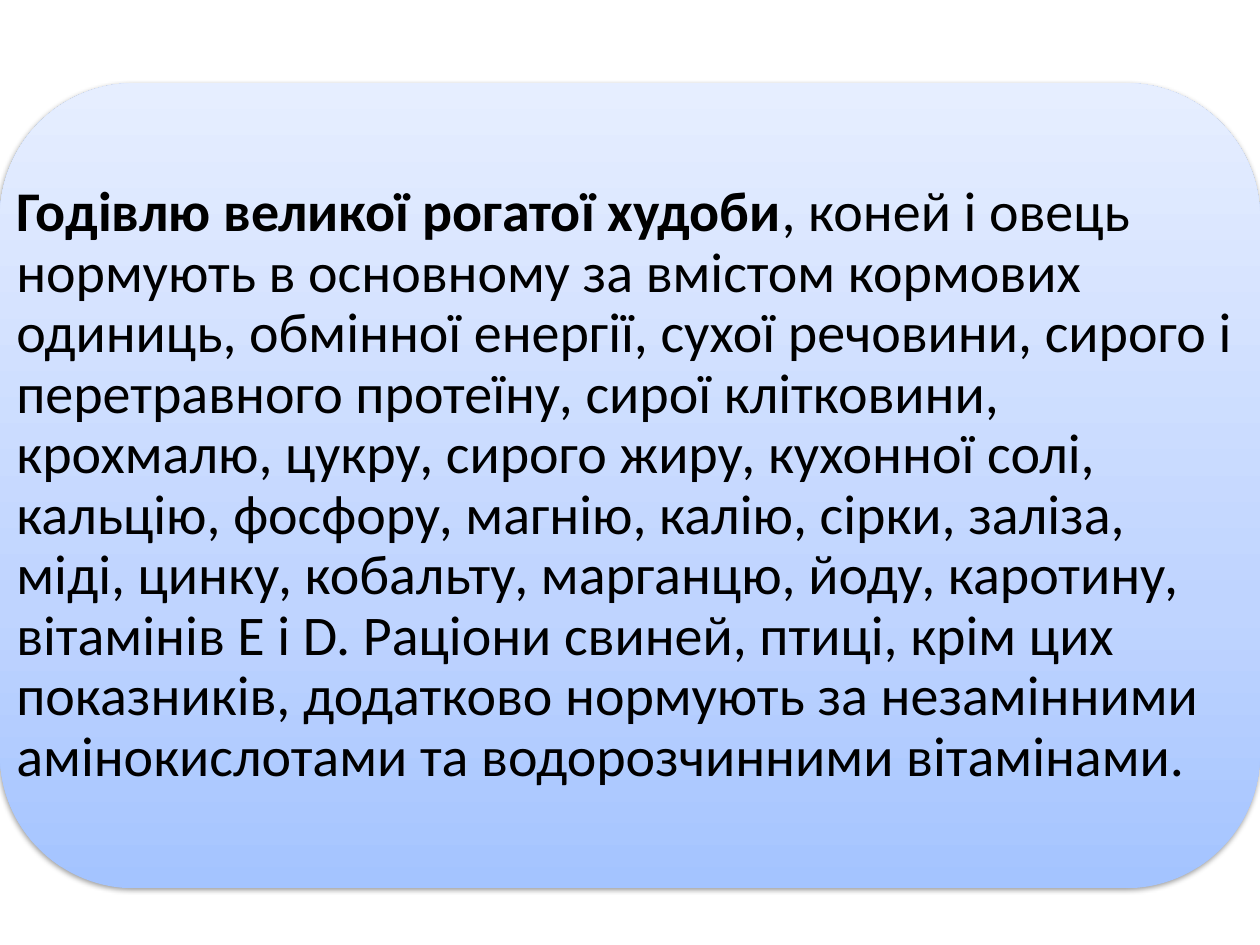
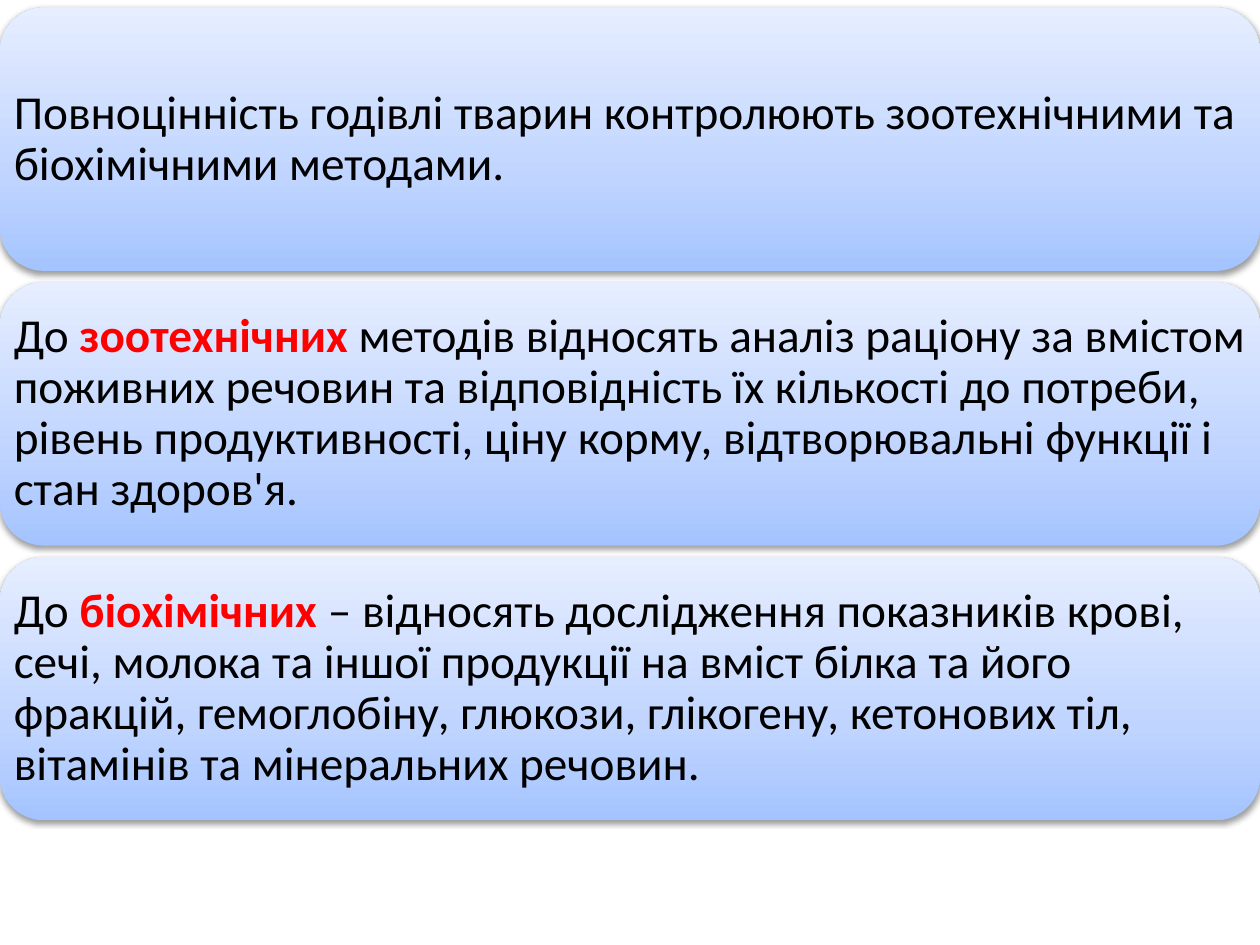
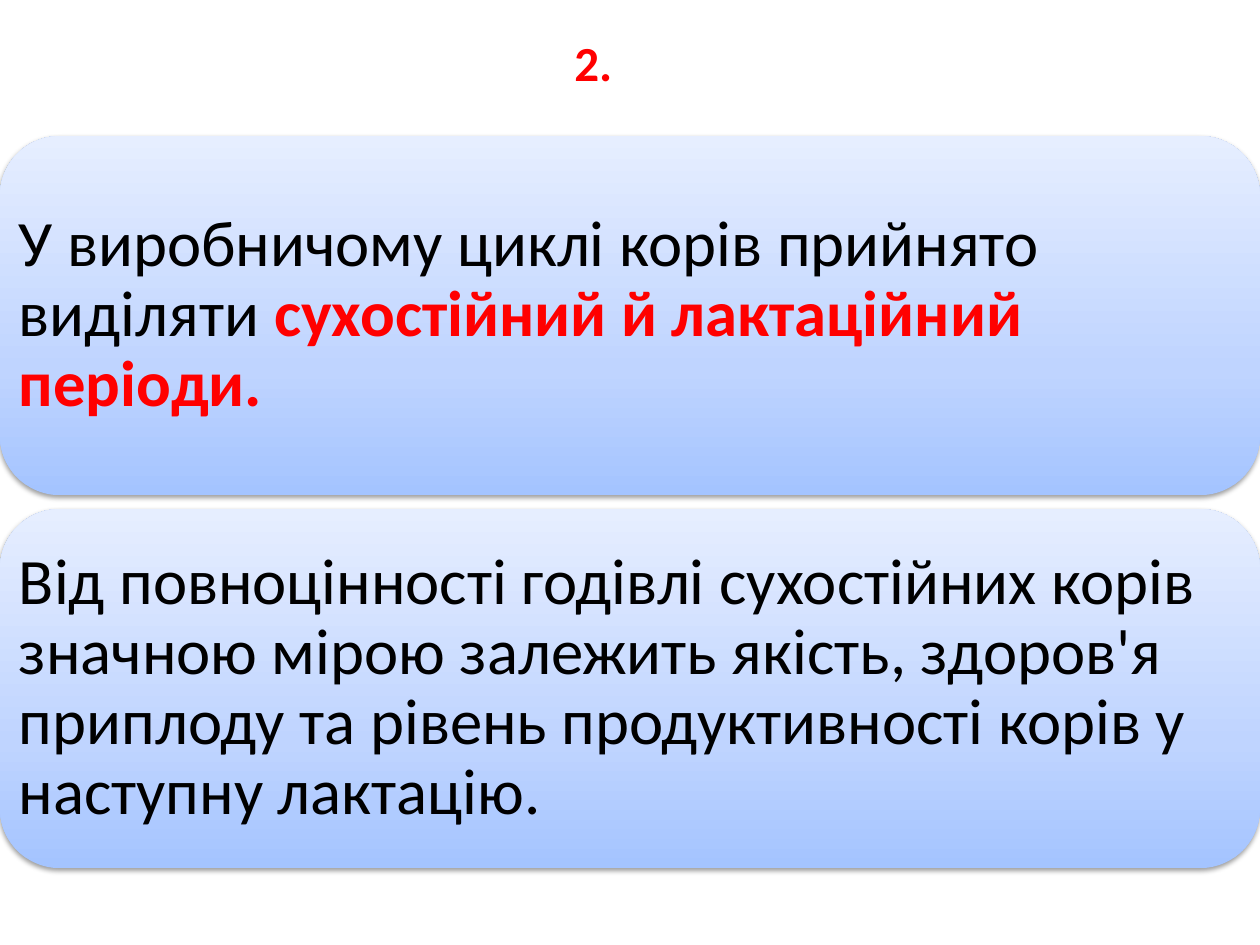
from lxml.etree import SubElement
from pptx import Presentation
from pptx.dml.color import RGBColor
from pptx.enum.shapes import MSO_SHAPE
from pptx.enum.text import MSO_ANCHOR, MSO_AUTO_SIZE, PP_ALIGN
from pptx.oxml.ns import qn
from pptx.util import Inches, Pt

# Shared style
FONT = "Calibri"
COLORS = {
    "text": "000000",
    "accent": "FF0000",
    "shadow": "000000",
    "panel_bottom": "A4C4FF",
    "panel_middle": "BFD4FF",
    "panel_top": "E6EEFF",
}
PANEL_STOPS = [(0, "panel_bottom"), (35, "panel_middle"), (100, "panel_top")]
PANEL_WIDTH = 10

# Each panel is a list of runs: text, colour, bold
SLIDES = [
    {
        "top": 0.66, "height": 6.39, "gap": 0, "inset": 0.13, "size": 32,
        "panels": [
            [("Годівлю великої рогатої худоби", "text", True),
             (", коней і овець нормують в основному за вмістом кормових одиниць, "
              "обмінної енергії, сухої речовини, сирого і перетравного протеїну, "
              "сирої клітковини, крохмалю, цукру, сирого жиру, кухонної солі, "
              "кальцію, фосфору, магнію, калію, сірки, заліза, міді, цинку, "
              "кобальту, марганцю, йоду, каротину, вітамінів Е і D. Раціони "
              "свиней, птиці, крім цих показників, додатково нормують за "
              "незамінними амінокислотами та водорозчинними вітамінами.",
              "text", False)],
        ],
    },
    {
        "top": 0.06, "height": 2.09, "gap": 0.09, "inset": 0.11, "size": 27,
        "panels": [
            [("Повноцінність годівлі тварин контролюють зоотехнічними та "
              "біохімічними методами.", "text", False)],
            [("До ", "text", False),
             ("зоотехнічних ", "accent", True),
             ("методів відносять аналіз раціону за вмістом поживних речовин та "
              "відповідність їх кількості до потреби, рівень продуктивності, "
              "ціну корму, відтворювальні функції і стан здоров'я.",
              "text", False)],
            [("До ", "text", False),
             ("біохімічних ", "accent", True),
             ("– відносять дослідження показників крові, сечі, молока та іншої "
              "продукції на вміст білка та його фракцій, гемоглобіну, глюкози, "
              "глікогену, кетонових тіл, вітамінів та мінеральних речовин.",
              "text", False)],
        ],
    },
    {
        "title": " 2.",
        "top": 1.08, "height": 2.85, "gap": 0.11, "inset": 0.15, "size": 37,
        "panels": [
            [("У виробничому циклі корів прийнято виділяти ", "text", False),
             ("сухостійний й лактаційний періоди.", "accent", True)],
            [("Від повноцінності годівлі сухостійних корів значною мірою "
              "залежить якість, здоров'я приплоду та рівень продуктивності "
              "корів у наступну лактацію.", "text", False)],
        ],
    },
]


def add_run(paragraph, text, size, color, bold):
    run = paragraph.add_run()
    run.text = text
    run.font.name = FONT
    run.font.size = Pt(size)
    run.font.bold = bold
    run.font.color.rgb = RGBColor.from_string(COLORS[color])


def add_panel(slide, top, height, inset, size, runs):
    box = [Inches(value) for value in (0, top, PANEL_WIDTH, height)]

    # Rounded panel with a vertical gradient
    shape = slide.shapes.add_shape(MSO_SHAPE.ROUNDED_RECTANGLE, *box)
    shape.line.fill.background()
    shape.fill.gradient()
    shape.fill.gradient_angle = 90
    stop_list = shape._element.xpath(".//a:gsLst")[0]
    for stop in list(stop_list):
        stop_list.remove(stop)
    for position, color in PANEL_STOPS:
        stop = SubElement(stop_list, qn("a:gs"), pos=str(position * 1000))
        SubElement(stop, qn("a:srgbClr"), val=COLORS[color])

    # Soft shadow below the panel
    shape.shadow.inherit = False
    effects = shape._element.spPr.find(qn("a:effectLst"))
    shadow = SubElement(effects, qn("a:outerShdw"), blurRad=str(Pt(3.1)),
                        dist=str(Pt(1.6)), dir="5400000", rotWithShape="0")
    shadow_color = SubElement(shadow, qn("a:srgbClr"), val=COLORS["shadow"])
    SubElement(shadow_color, qn("a:alpha"), val="38000")

    # Text over the full width, free of the rounded corners' inset
    frame = slide.shapes.add_textbox(*box).text_frame
    frame.word_wrap = True
    frame.vertical_anchor = MSO_ANCHOR.MIDDLE
    frame.margin_left = frame.margin_right = Inches(inset)
    frame.margin_top = frame.margin_bottom = Inches(inset)
    paragraph = frame.paragraphs[0]
    paragraph.line_spacing = 0.9
    for text, color, bold in runs:
        add_run(paragraph, text, size, color, bold)


presentation = Presentation()
presentation.slide_width = Inches(10)
presentation.slide_height = Inches(7.5)
TITLE_ONLY, BLANK = presentation.slide_layouts[5], presentation.slide_layouts[6]

for content in SLIDES:
    slide = presentation.slides.add_slide(TITLE_ONLY if "title" in content else BLANK)

    # Section number
    if "title" in content:
        title = slide.shapes.title
        title.left, title.top = Inches(4.37), Inches(0.21)
        title.width, title.height = Inches(0.6), Inches(0.57)
        frame = title.text_frame
        frame.word_wrap = False
        frame.auto_size = MSO_AUTO_SIZE.SHAPE_TO_FIT_TEXT
        frame.vertical_anchor = MSO_ANCHOR.TOP
        paragraph = frame.paragraphs[0]
        paragraph.alignment = PP_ALIGN.LEFT
        add_run(paragraph, content["title"], 28, "accent", True)

    # Stack of panels
    for index, runs in enumerate(content["panels"]):
        top = content["top"] + index * (content["height"] + content["gap"])
        add_panel(slide, top, content["height"], content["inset"], content["size"], runs)

presentation.save("out.pptx")
